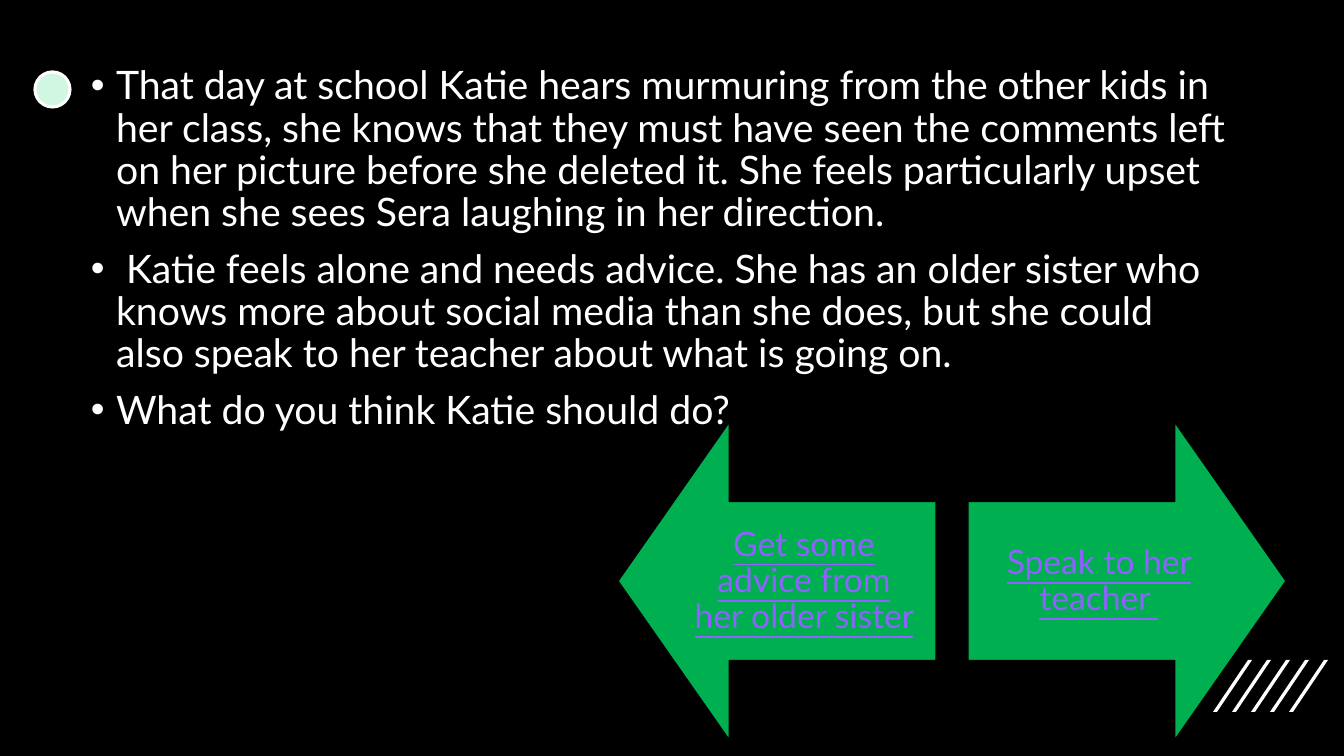
from lxml import etree
from pptx import Presentation, util as u
from pptx.dml.color import RGBColor
from pptx.enum import shapes, text
from pptx.oxml.ns import qn

STORY = [
    "That day at school Katie hears murmuring from the other kids in her class, she knows that they must have seen the comments left on her picture before she deleted it. She feels particularly upset when she sees Sera laughing in her direction.",
    " Katie feels alone and needs advice. She has an older sister who knows more about social media than she does, but she could also speak to her teacher about what is going on.",
    "What do you think Katie should do?",
]
CHOICES = [
    {"label": "Get some advice from her older sister ", "arrow": 618, "text": 673, "turn": 270},
    {"label": "Speak to her teacher ", "arrow": 968, "text": 968, "turn": 90},
]
BLACK, WHITE, MINT, GREEN, PURPLE = "000000", "FFFFFF", "CFF7E1", "00B050", "8F61FF"
BODY_FONT = {"name": "Lato", "size": u.Pt(28)}
CHOICE_FONT = {"name": "Lato", "size": u.Pt(24), "underline": True}
BODY_PARA = {"line_spacing": 0.9, "space_before": u.Pt(10)}
CHOICE_PARA = {"line_spacing": 0.9, "alignment": text.PP_ALIGN.CENTER}
MARGINS = ("margin_left", "margin_top", "margin_right", "margin_bottom")

ARROW_TOP, ARROW_SIZE = 422, 318
LABEL_TOP, LABEL_W, LABEL_H = 502, 262, 159
STRIPES, STRIPE_LEFT, STRIPE_TOP, STRIPE_STEP = 5, 1213, 660, 19
STRIPE_W, STRIPE_H, STRIPE_THICK = 39, 52, 4


def px(n):
    return round(n * 914400 / 100.8)


def rgb(color):
    return RGBColor.from_string(color)


def apply(obj, values):
    for key, value in values.items():
        setattr(obj, key, value)


def paint(sp, fill, line=None, width=1):
    sp.shadow.inherit = False
    sp.fill.solid()
    sp.fill.fore_color.rgb = rgb(fill)
    if line:
        sp.line.color.rgb = rgb(line)
        sp.line.width = u.Pt(width)
    else:
        sp.line.fill.background()


def add_text(s, box, paragraphs, para, font, color, frame):
    tf = s.shapes.add_textbox(*map(px, box)).text_frame
    apply(tf, {"word_wrap": True, **frame})
    for i, words in enumerate(paragraphs):
        p = tf.paragraphs[0] if i == 0 else tf.add_paragraph()
        apply(p, para)
        r = p.add_run()
        r.text = words
        apply(r.font, font)
        r.font.color.rgb = rgb(color)
    return tf


def add_bullet(p):
    pPr = p._p.get_or_add_pPr()
    pPr.set("marL", str(u.Inches(0.25)))
    pPr.set("indent", str(-u.Inches(0.25)))
    etree.SubElement(pPr, qn("a:buFont")).set("typeface", "Arial")
    etree.SubElement(pPr, qn("a:buChar")).set("char", "•")


def main():
    prs = Presentation()
    prs.slide_width, prs.slide_height = px(1344), px(756)
    s = prs.slides.add_slide(prs.slide_layouts[6])
    s.background.fill.solid()
    s.background.fill.fore_color.rgb = rgb(BLACK)

    for i in range(STRIPES):
        x, bottom = STRIPE_LEFT + i * STRIPE_STEP, STRIPE_TOP + STRIPE_H
        right = x + STRIPE_W
        fb = s.shapes.build_freeform(px(x + STRIPE_THICK), px(bottom))
        corners = [(x, bottom), (right - STRIPE_THICK, STRIPE_TOP), (right, STRIPE_TOP)]
        fb.add_line_segments([(px(a), px(b)) for a, b in corners])
        paint(fb.convert_to_shape(), WHITE)

    dot = s.shapes.add_shape(shapes.MSO_SHAPE.OVAL, *map(px, (35, 72, 35, 35)))
    paint(dot, MINT, WHITE, 2.25)

    tf = add_text(s, (81, 61, 1159, 480), STORY, BODY_PARA, BODY_FONT, WHITE, {})
    for p in tf.paragraphs:
        add_bullet(p)

    frame = {"vertical_anchor": text.MSO_ANCHOR.MIDDLE, **dict.fromkeys(MARGINS, px(19))}
    for choice in CHOICES:
        box = (choice["arrow"], ARROW_TOP, ARROW_SIZE, ARROW_SIZE)
        arrow = s.shapes.add_shape(shapes.MSO_SHAPE.UP_ARROW, *map(px, box))
        arrow.rotation = choice["turn"]
        arrow.adjustments[0], arrow.adjustments[1] = 0.5, 0.35
        paint(arrow, GREEN, BLACK)
        box = (choice["text"], LABEL_TOP, LABEL_W, LABEL_H)
        add_text(s, box, [choice["label"]], CHOICE_PARA, CHOICE_FONT, PURPLE, frame)

    prs.save("out.pptx")


if __name__ == "__main__":
    main()
